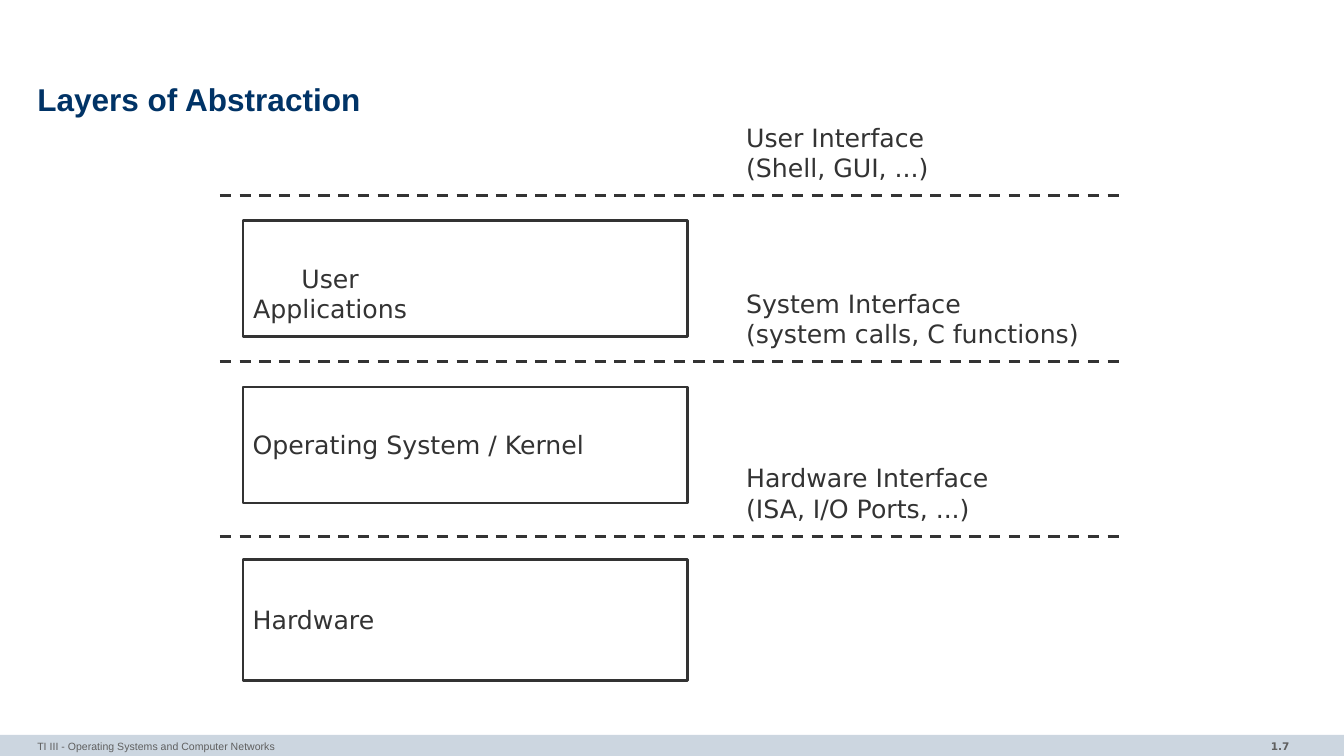
from lxml import etree
from pptx import Presentation
from pptx.dml.color import RGBColor
from pptx.enum.dml import MSO_LINE
from pptx.enum.shapes import MSO_CONNECTOR, MSO_SHAPE
from pptx.enum.text import MSO_ANCHOR, PP_ALIGN
from pptx.oxml.ns import qn
from pptx.util import Inches, Pt

LEFT, MID, RIGHT = PP_ALIGN.LEFT, PP_ALIGN.CENTER, PP_ALIGN.RIGHT
TOP, CENTER = MSO_ANCHOR.TOP, MSO_ANCHOR.MIDDLE
RECT, LINE, DASH = MSO_SHAPE.RECTANGLE, MSO_CONNECTOR.STRAIGHT, MSO_LINE.DASH
COLORS = {"ink": "333333", "title": "003366", "bar": "CCD6E0", "foot": "5F5F5F"}
SANS, ARIAL = "DejaVu Sans", "Arial"
WIDTH, HEIGHT = 133.3, 75  # grid columns and rows


def grid(*cells):
    """Turn grid cells, ten to the inch, into lengths."""
    return [Inches(c / 10) for c in cells]


class Page:
    def __init__(self, slide):
        self.shapes = slide.shapes

    def color(self, name):
        return RGBColor.from_string(COLORS[name])

    def stroke(self, line):
        line.color.rgb = self.color("ink")
        line.width = Pt(2)

    def box(self, x, y, w, h, fill=None):
        rect = self.shapes.add_shape(RECT, *grid(x, y, w, h))
        rect.shadow.inherit = False
        if fill:
            rect.fill.solid()
            rect.fill.fore_color.rgb = self.color(fill)
            rect.line.fill.background()
        else:
            rect.fill.background()
            self.stroke(rect.line)

    def rule(self, x, y, end):
        line = self.shapes.add_connector(LINE, *grid(x, y, end, y))
        self.stroke(line.line)
        line.line.dash_style = DASH
        etree.SubElement(line._element.spPr, qn("a:effectLst"))

    def text(self, x, y, w, h, lines, size=18, font=SANS, color="ink",
             bold=False, align=LEFT, anchor=TOP, space=1.0):
        frame = self.shapes.add_textbox(*grid(x, y, w, h)).text_frame
        frame.word_wrap = True
        frame.vertical_anchor = anchor
        frame.margin_left = frame.margin_right = 0
        frame.margin_top = frame.margin_bottom = Inches(0.05)
        frame.text = lines
        for para in frame.paragraphs:
            para.alignment = align
            para.line_spacing = space
            para.font.name = font
            para.font.size = Pt(size)
            para.font.bold = bold
            para.font.color.rgb = self.color(color)


def main():
    deck = Presentation()
    deck.slide_width, deck.slide_height = grid(WIDTH, HEIGHT)
    page = Page(deck.slides.add_slide(deck.slide_layouts[6]))

    # Footer bar and title
    page.box(0, 72.9, WIDTH, 2.1, "bar")
    page.text(111, 72.9, 16.9, 2.1, "1.7", 7.5, color="foot",
              bold=True, align=RIGHT)
    page.text(3.7, 72.9, 87.2, 2.1,
              "TI III - Operating Systems and Computer Networks",
              7.5, ARIAL, "foot")
    page.text(3.7, 7.8, 126, 4.7, "Layers of Abstraction", 22.5, ARIAL,
              "title", True, anchor=CENTER, space=0.85)

    # Layers: rule row, box row, box height, name row, name width, texts
    layers = [
        (19.4, 21.9, 11.5, 25.6, 16.3, "User Applications",
         "User Interface\n(Shell, GUI, ...)"),
        (35.9, 38.4, 11.5, 42.1, 33.8, "Operating System / Kernel",
         "System Interface\n(system calls, C functions)"),
        (53.2, 55.5, 12, 59.5, 13, "Hardware",
         "Hardware Interface\n(ISA, I/O Ports, ...)"),
    ]
    for rule, top, tall, row, wide, name, face in layers:
        page.box(24.1, top, 44.1, tall)
        page.text(24.6, row, wide, 4, name, align=MID)
        page.rule(21.8, rule, 111.5)
        page.text(74, rule - 7.8, 37.5, 7, face)

    deck.save("out.pptx")


if __name__ == "__main__":
    main()
